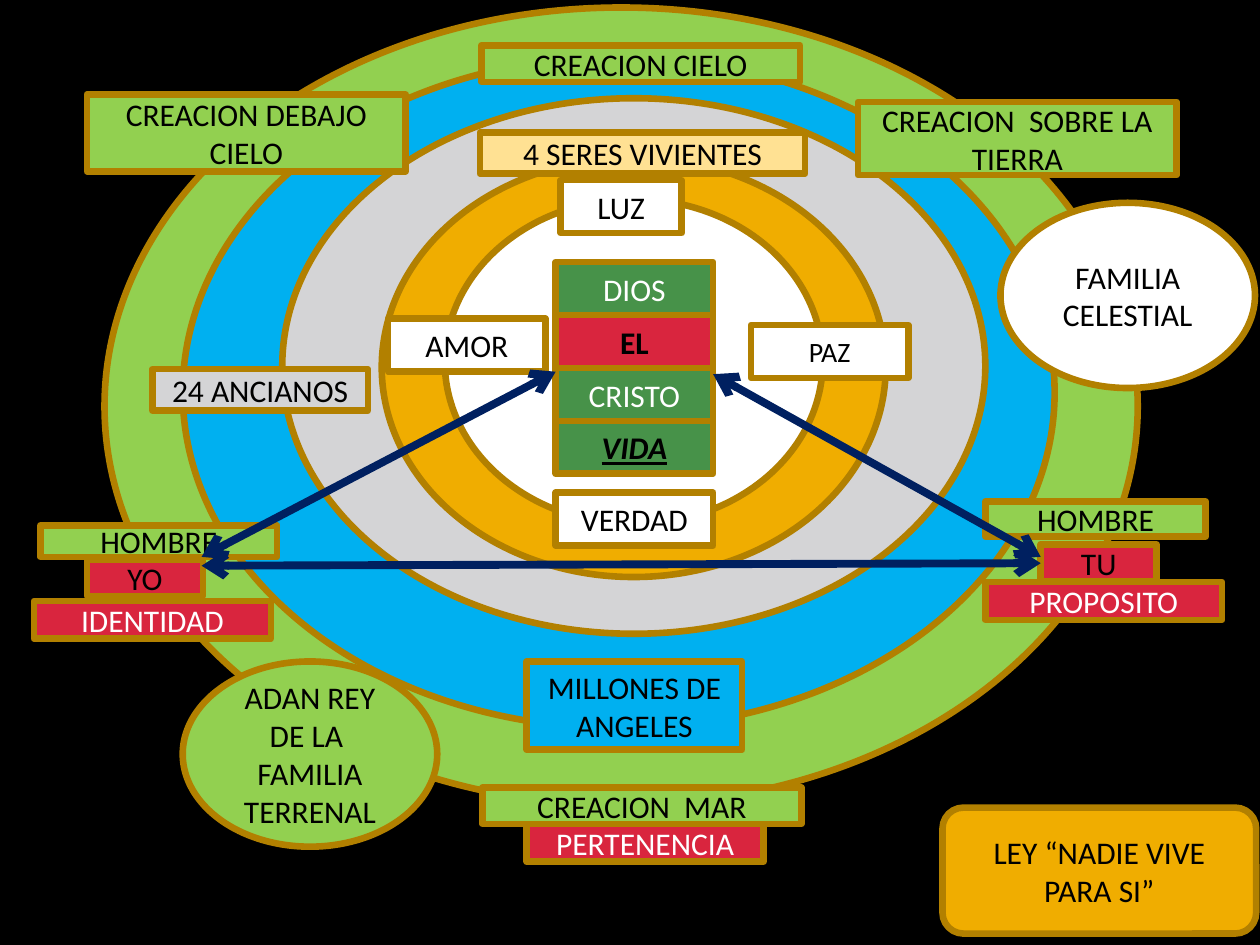
from lxml import etree
from pptx import Presentation
from pptx import util as u
from pptx.dml.color import RGBColor
from pptx.enum import shapes, text
from pptx.oxml.ns import qn

COLORS = {
    "black": "000000", "white": "FFFFFF", "lime": "92D050", "sky": "00B0F0",
    "silver": "D4D4D6", "gold": "F0AD00", "cream": "FFE193", "green": "479249",
    "red": "D9253E", "bronze": "B28000", "navy": "002060",
}
RECT = shapes.MSO_SHAPE.RECTANGLE
OVAL = shapes.MSO_SHAPE.OVAL
ROUND = shapes.MSO_SHAPE.ROUNDED_RECTANGLE

# fill, (left, top, width, height), outermost first
RINGS = [
    ("lime", (0.83, 0.06, 8.2, 6.33)),
    ("sky", (1.45, 0.45, 6.92, 5.33)),
    ("silver", (2.24, 0.78, 5.58, 4.25)),
    ("gold", (3.03, 1.25, 4, 3.33)),
    ("white", (3.53, 1.58, 3, 2.58)),
]

# words, fill, text colour, font styles, from top to bottom
CENTRE = [
    ("DIOS", "green", "white", ()),
    ("EL", "red", "black", ("bold",)),
    ("CRISTO", "green", "white", ()),
    ("VIDA", "green", "black", ("bold", "italic", "underline")),
]
CENTRE_LEFT, CENTRE_TOP = 4.41, 2.08
CELL_W, CELL_H = 1.25, 0.42

# words, fill, text colour, (left, top, width, height)
LABELS = [
    ("VERDAD", "white", "black", (CENTRE_LEFT, 3.91, CELL_W, CELL_H)),
    ("LUZ", "white", "black", (4.45, 1.43, 0.96, CELL_H)),
    ("AMOR", "white", "black", (3.08, 2.53, CELL_W, CELL_H)),
    ("4 SERES VIVIENTES", "cream", "black", (3.81, 1.05, 2.58, 0.33)),
    ("MILLONES DE ANGELES", "sky", "black", (4.18, 5.25, 1.71, 0.7)),
    ("24 ANCIANOS", "silver", "black", (1.21, 2.93, 1.71, 0.33)),
    ("HOMBRE", "lime", "black", (0.32, 4.17, 1.88, 0.25)),
    ("CREACION DEBAJO CIELO", "lime", "black", (0.69, 0.75, 2.53, 0.61)),
    ("YO", "red", "black", (0.69, 4.44, 0.92, 0.29)),
    ("HOMBRE", "lime", "black", (7.82, 3.98, 1.75, 0.28)),
    ("TU", "red", "black", (8.26, 4.32, 0.92, 0.29)),
    ("CREACION  SOBRE LA TIERRA", "lime", "black", (6.81, 0.81, 2.53, 0.58)),
    ("CREACION CIELO", "lime", "black", (3.82, 0.36, 2.53, 0.29)),
    ("CREACION  MAR", "lime", "black", (3.83, 6.25, 2.53, 0.29)),
    ("PERTENENCIA", "red", "white", (4.18, 6.54, 1.88, 0.3)),
    ("IDENTIDAD", "red", "white", (0.27, 4.77, 1.88, 0.3)),
    ("PROPOSITO", "red", "white", (7.82, 4.62, 1.88, 0.3)),
]
BUBBLES = [
    (OVAL, "ADAN REY DE LA \nFAMILIA TERRENAL", "lime", (1.45, 5.25, 2.02, 1.47)),
    (OVAL, "FAMILIA CELESTIAL", "white", (7.94, 1.61, 2.02, 1.47)),
    (ROUND, "LEY “NADIE VIVE PARA SI”", "gold", (7.48, 6.41, 2.49, 1)),
]

# start, end
ARROWS = [
    ((1.6, 4.42), (4.41, 2.95)),
    ((1.6, 4.49), (8.26, 4.47)),
    ((5.66, 2.97), (8.26, 4.42)),
]


def rgb(name):
    return RGBColor.from_string(COLORS[name])


def add_box(s, kind, fill, box, words="", color="black", size=18, styles=()):
    sp = s.shapes.add_shape(kind, *map(u.Inches, box))
    sp.shadow.inherit = False
    sp.fill.solid()
    sp.fill.fore_color.rgb = rgb(fill)
    sp.line.color.rgb = rgb("bronze")
    sp.line.width = u.Pt(3.78)
    if not words:
        return
    tf = sp.text_frame
    tf.text = words
    tf.word_wrap = True
    tf.vertical_anchor = text.MSO_ANCHOR.MIDDLE
    for p in tf.paragraphs:
        p.alignment = text.PP_ALIGN.CENTER
        for r in p.runs:
            r.font.name = "Calibri"
            r.font.size = u.Pt(size)
            r.font.color.rgb = rgb(color)
            for style in styles:
                setattr(r.font, style, True)


def add_double_arrow(s, start, end):
    c = s.shapes.add_connector(shapes.MSO_CONNECTOR.STRAIGHT,
                               *map(u.Inches, start + end))
    c.line.color.rgb = rgb("navy")
    c.line.width = u.Pt(4.5)
    ln = c.line._get_or_add_ln()
    for tag in ("a:headEnd", "a:tailEnd"):
        etree.SubElement(ln, qn(tag), type="arrow")
    etree.SubElement(c._element.spPr, qn("a:effectLst"))


def main():
    prs = Presentation()
    prs.slide_width, prs.slide_height = u.Inches(10), u.Inches(7.5)
    s = prs.slides.add_slide(prs.slide_layouts[6])
    s.background.fill.solid()
    s.background.fill.fore_color.rgb = rgb("black")

    for fill, box in RINGS:
        add_box(s, OVAL, fill, box)
    for i, (words, fill, color, styles) in enumerate(CENTRE):
        box = (CENTRE_LEFT, CENTRE_TOP + i * CELL_H, CELL_W, CELL_H)
        add_box(s, RECT, fill, box, words, color, styles=styles)
    add_box(s, RECT, "white", (5.96, 2.58, CELL_W, CELL_H), "PAZ", size=16)
    for words, fill, color, box in LABELS:
        add_box(s, RECT, fill, box, words, color)
    for kind, words, fill, box in BUBBLES:
        add_box(s, kind, fill, box, words)
    for start, end in ARROWS:
        add_double_arrow(s, start, end)

    prs.save("out.pptx")


if __name__ == "__main__":
    main()
